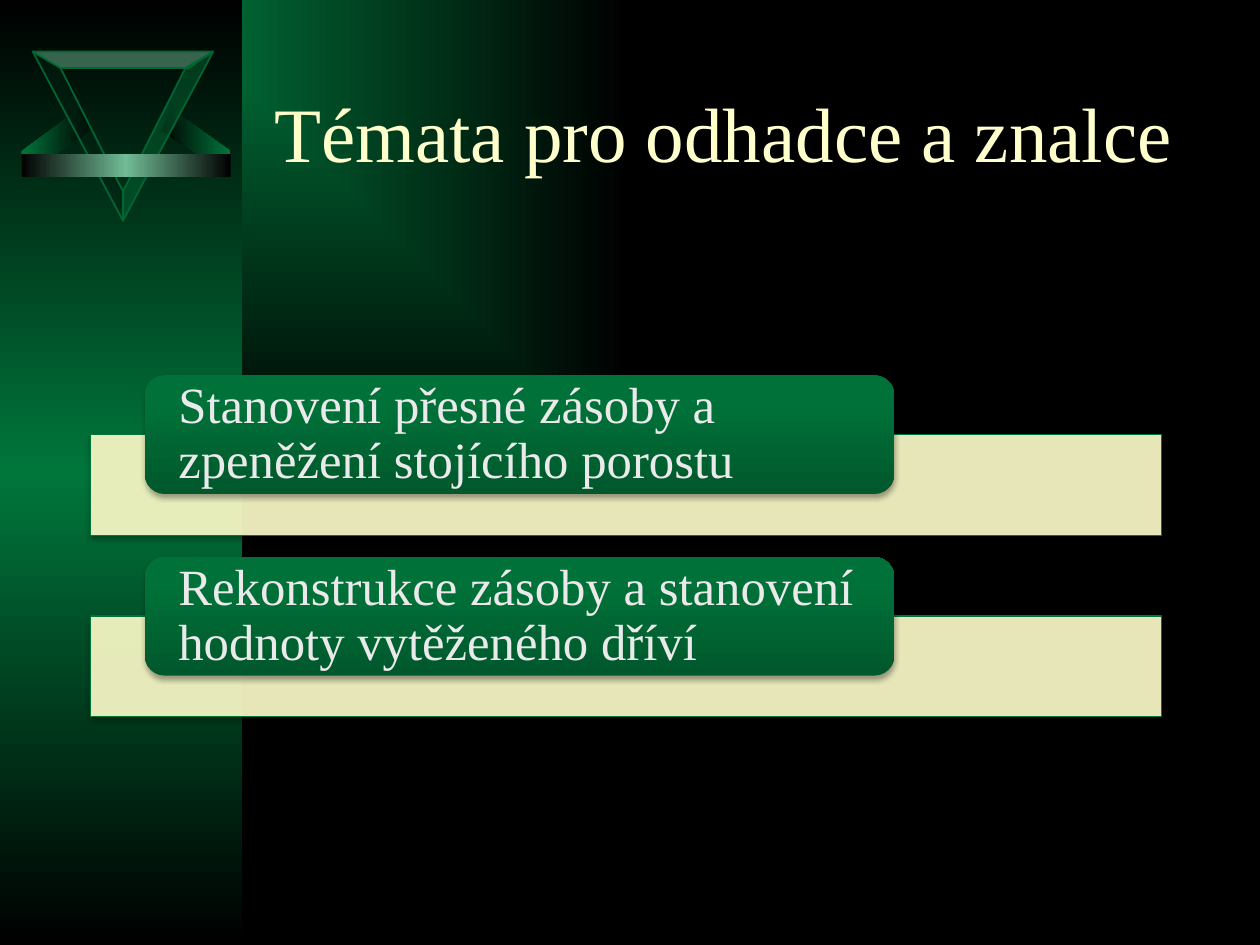
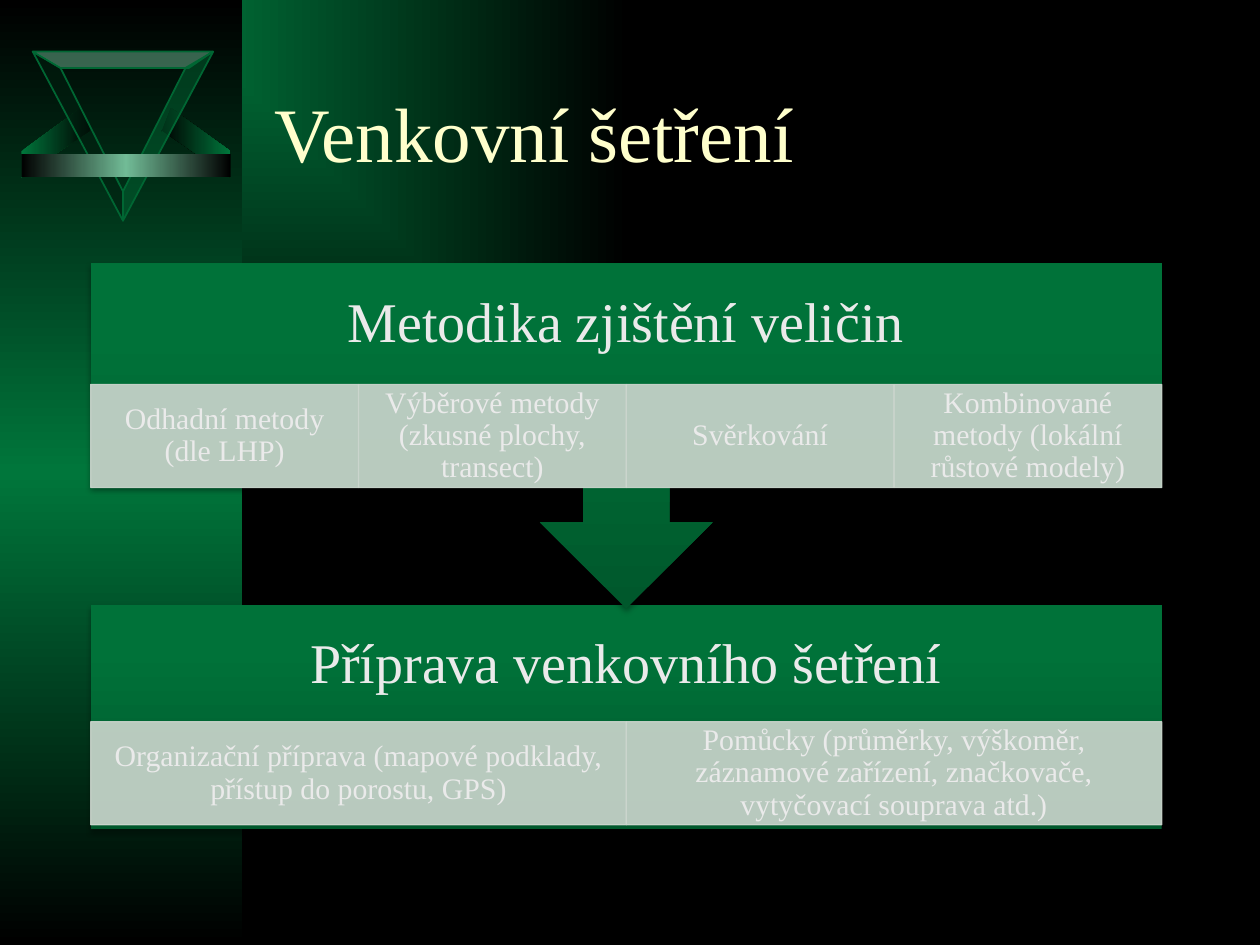
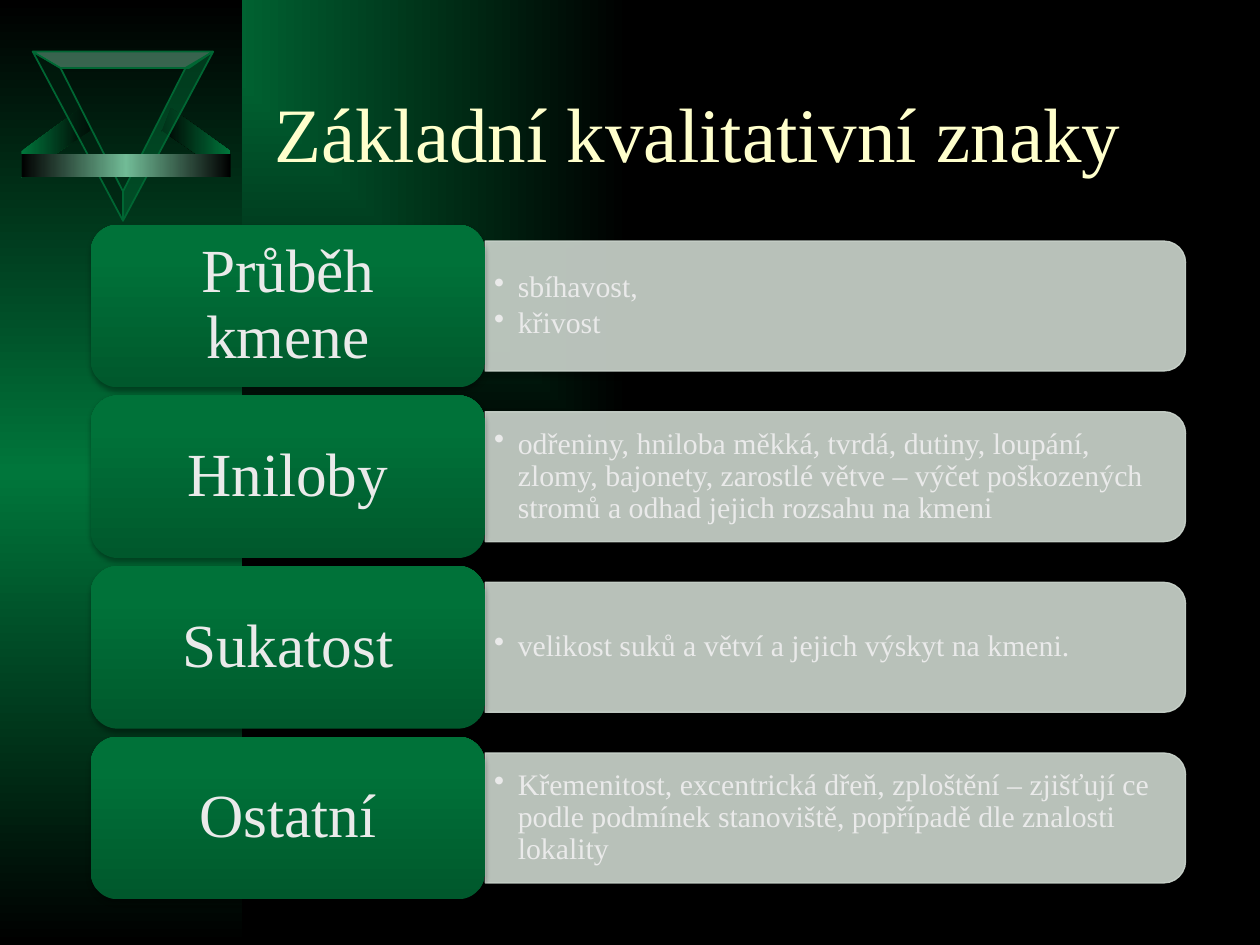
from dataclasses import dataclass
from typing import Any, NamedTuple

from pptx import Presentation
from pptx import oxml
from pptx import util as u
from pptx.dml.color import RGBColor
from pptx.enum import shapes, text
from pptx.oxml import ns

BLACK = RGBColor(0x00, 0x00, 0x00)
GREEN = RGBColor(0x00, 0x76, 0x3B)
PANEL_DARK = RGBColor(0x00, 0x58, 0x2C)
PANEL_MID = RGBColor(0x00, 0x72, 0x39)
PANEL_LIGHT = RGBColor(0x00, 0x73, 0x39)
EMBLEM_DARK = RGBColor(0x00, 0x20, 0x10)
EMBLEM_GREEN = RGBColor(0x00, 0x66, 0x33)
MINT = RGBColor(0x71, 0xBB, 0x96)
CREAM = RGBColor(0xFF, 0xFF, 0xCC)
SAGE = RGBColor(0xCC, 0xD6, 0xCE)
PALE = RGBColor(0xEA, 0xEA, 0xEA)
FONT = "Times New Roman"
PRESET = shapes.MSO_SHAPE
ALIGN = text.PP_ALIGN

LEFT = 1.83
WIDTH = 21.59


class Box(NamedTuple):
    left: float
    top: float
    width: float
    height: float

    def lengths(self) -> list[u.Length]:
        return [u.Cm(value) for value in self]


class Stop(NamedTuple):
    position: int
    color: RGBColor


@dataclass(frozen=True)
class Style:
    fill: RGBColor | None = None
    opacity: int = 100
    stops: tuple[Stop, ...] = ()
    angle: int = 0
    line: RGBColor | None = None
    line_width: float = 0.75
    line_opacity: int = 100
    shadow: bool = False


@dataclass(frozen=True)
class Block:
    top: float
    height: float
    preset: shapes.MSO_SHAPE
    rotation: int
    cells_top: float
    heading: str
    cells: tuple[str, ...]


@dataclass(frozen=True)
class Trait:
    name: str
    signs: tuple[str, ...]


PANEL = Style(
    stops=(Stop(0, PANEL_DARK), Stop(80, PANEL_MID), Stop(100, PANEL_LIGHT)),
    angle=270,
    shadow=True,
)
BAR = Style(fill=CREAM, opacity=90, line=GREEN, shadow=True)
CELL = Style(fill=SAGE, opacity=90, line=SAGE, line_opacity=90)
TRAIT_BODY = Style(fill=SAGE, opacity=90, line=SAGE, line_opacity=90, shadow=True)
SIDEBAR = Style(stops=(Stop(0, BLACK), Stop(50, GREEN), Stop(100, BLACK)), angle=90)
RIBBON = Style(stops=(Stop(0, BLACK), Stop(50, MINT), Stop(100, BLACK)))

RIGHT_WING = ((4.65, 3.05), (4.65, 3.58), (3.25, 2.62), (3.25, 2.67), (3.45, 2.18))
LEFT_SIDE = ((2.48, 4.45), (2.48, 3.86), (1.22, 1.37), (0.66, 1.04))
TOP_SIDE = ((0.66, 1.04), (1.22, 1.37), (3.81, 1.37), (4.29, 1.04))

TOPICS = (
    "Stanovení přesné zásoby a zpeněžení stojícího porostu",
    "Rekonstrukce zásoby a stanovení hodnoty vytěženého dříví",
)
BLOCKS = (
    Block(
        12.19, 4.52, PRESET.RECTANGLE, 0, 14.55,
        "Příprava venkovního šetření",
        (
            "Organizační příprava (mapové podklady, přístup do porostu, GPS)",
            "Pomůcky (průměrky, výškoměr, záznamové zařízení, značkovače, "
            "vytyčovací souprava atd.)",
        ),
    ),
    Block(
        5.31, 6.96, PRESET.UP_ARROW_CALLOUT, 180, 7.75,
        "Metodika zjištění veličin",
        (
            "Odhadní metody (dle LHP)",
            "Výběrové metody (zkusné plochy, transect)",
            "Svěrkování",
            "Kombinované metody (lokální růstové modely)",
        ),
    ),
)
TRAITS = (
    Trait("Průběh kmene", ("sbíhavost,", "křivost")),
    Trait("Hniloby", (
        "odřeniny, hniloba měkká, tvrdá, dutiny, loupání, zlomy, bajonety, zarostlé "
        "větve – výčet poškozených stromů a odhad jejich rozsahu na kmeni",
    )),
    Trait("Sukatost", ("velikost suků a větví a jejich výskyt na kmeni.",)),
    Trait("Ostatní", (
        "Křemenitost, excentrická dřeň, zploštění – zjišťují ce podle podmínek "
        "stanoviště, popřípadě dle znalosti lokality",
    )),
)


def linear(angle: int) -> str:
    return f'<a:lin ang="{angle * 60000}" scaled="0"/>'


def fill_gradient(owner: Any, fill: Any, stops: tuple[Stop, ...], direction: str) -> None:
    fill.gradient()
    gradient = owner.find(".//" + ns.qn("a:gradFill"))
    stop_list = "".join(
        f'<a:gs pos="{stop.position * 1000}"><a:srgbClr val="{stop.color}"/></a:gs>'
        for stop in stops
    )
    gradient.getparent().replace(gradient, oxml.parse_xml(
        f'<a:gradFill {ns.nsdecls("a")} rotWithShape="0">'
        f"<a:gsLst>{stop_list}</a:gsLst>{direction}</a:gradFill>"
    ))


def set_opacity(parent: Any, percent: int) -> None:
    color = parent.find(f'{ns.qn("a:solidFill")}/{ns.qn("a:srgbClr")}')
    color.append(oxml.parse_xml(f'<a:alpha {ns.nsdecls("a")} val="{percent * 1000}"/>'))


def apply_style(shape: Any, style: Style) -> None:
    properties = shape.element.spPr
    if style.stops:
        fill_gradient(shape.element, shape.fill, style.stops, linear(style.angle))
    else:
        shape.fill.solid()
        shape.fill.fore_color.rgb = style.fill
        if style.opacity < 100:
            set_opacity(properties, style.opacity)
    if style.line is None:
        shape.line.fill.background()
    else:
        shape.line.color.rgb = style.line
        shape.line.width = u.Pt(style.line_width)
        if style.line_opacity < 100:
            set_opacity(properties.find(ns.qn("a:ln")), style.line_opacity)
    shape.shadow.inherit = False
    if style.shadow:
        properties.find(ns.qn("a:effectLst")).append(oxml.parse_xml(
            f'<a:outerShdw {ns.nsdecls("a")} blurRad="40000" dist="23000" dir="5400000" '
            'rotWithShape="0"><a:srgbClr val="000000"><a:alpha val="35000"/></a:srgbClr>'
            "</a:outerShdw>"
        ))


def add_styled(
    parent: Any, preset: shapes.MSO_SHAPE, box: Box, style: Style, rotation: int = 0
) -> Any:
    shape = parent.shapes.add_shape(preset, *box.lengths())
    shape.rotation = rotation
    apply_style(shape, style)
    return shape


def add_outline(parent: Any, points: tuple[tuple[float, float], ...], style: Style) -> None:
    corners = [(u.Cm(x), u.Cm(y)) for x, y in points]
    builder = parent.shapes.build_freeform(*corners[0], scale=1.0)
    builder.add_line_segments(corners[1:], close=True)
    apply_style(builder.convert_to_shape(), style)


def mirrored(
    points: tuple[tuple[float, float], ...], axis: float
) -> tuple[tuple[float, float], ...]:
    return tuple((2 * axis - x, y) for x, y in points)


def add_bullet(paragraph: Any, indent: float) -> None:
    properties = paragraph._p.get_or_add_pPr()
    properties.set("marL", str(u.Cm(indent)))
    properties.set("indent", str(-u.Cm(indent)))
    properties.append(oxml.parse_xml(f'<a:buChar {ns.nsdecls("a")} char="•"/>'))


def write(
    shape: Any,
    *lines: str,
    size: float,
    color: RGBColor = PALE,
    align: ALIGN = ALIGN.CENTER,
    inset_x: float = 0,
    inset_y: float = 0,
    line_spacing: float = 0.9,
    space_after: float = 0,
    bulleted: bool = False,
) -> None:
    frame = shape.text_frame
    frame.word_wrap = True
    frame.auto_size = text.MSO_AUTO_SIZE.NONE
    frame.vertical_anchor = text.MSO_ANCHOR.MIDDLE
    frame.margin_left = frame.margin_right = u.Cm(inset_x)
    frame.margin_top = frame.margin_bottom = u.Cm(inset_y)
    for index, line in enumerate(lines):
        paragraph = frame.add_paragraph() if index else frame.paragraphs[0]
        if bulleted:
            paragraph.level = 1
            add_bullet(paragraph, 0.48)
        paragraph.alignment = align
        paragraph.line_spacing = line_spacing
        paragraph.space_after = u.Pt(space_after)
        run = paragraph.add_run()
        run.text = line
        run.font.name = FONT
        run.font.size = u.Pt(size)
        run.font.color.rgb = color


def prepare_layout(layout: Any) -> None:
    fill_gradient(
        layout.element, layout.background.fill, (Stop(0, GREEN), Stop(100, BLACK)),
        '<a:path path="rect"><a:fillToRect r="100000" b="100000"/></a:path>',
    )
    title = layout.placeholders[0]
    title.left, title.top, title.width, title.height = Box(5.28, 0.64, 19.69, 4.01).lengths()


def add_backdrop(slide: Any, layout: Any) -> None:
    backdrop = slide.shapes.add_group_shape()
    add_styled(backdrop, PRESET.RECTANGLE, Box(0, 0, 4.88, 19.05), SIDEBAR)
    add_outline(backdrop, RIGHT_WING, Style(stops=(Stop(0, BLACK), Stop(100, GREEN))))
    add_outline(
        backdrop, mirrored(RIGHT_WING, 2.54), Style(stops=(Stop(0, GREEN), Stop(100, BLACK)))
    )
    for points, color in (
        (LEFT_SIDE, EMBLEM_DARK),
        (TOP_SIDE, MINT),
        (mirrored(LEFT_SIDE, 2.48), EMBLEM_GREEN),
    ):
        add_outline(
            backdrop, points, Style(fill=color, opacity=50, line=EMBLEM_GREEN, line_width=1)
        )
    add_styled(backdrop, PRESET.RECTANGLE, Box(0.43, 3.1, 4.22, 0.48), RIBBON)
    layout.shapes.element.insert(2, backdrop.element)


def add_titled_slide(presentation: Any, layout: Any, title: str) -> Any:
    slide = presentation.slides.add_slide(layout)
    write(
        slide.shapes.title, title, size=44, color=CREAM, align=ALIGN.LEFT,
        inset_x=0.25, inset_y=0.13, line_spacing=1.0,
    )
    return slide


def draw_topics(slide: Any) -> None:
    for index, topic in enumerate(TOPICS):
        top = 7.57 + index * 3.66
        add_styled(slide, PRESET.RECTANGLE, Box(LEFT, top + 1.19, WIDTH, 2.03), BAR)
        tab = add_styled(slide, PRESET.ROUNDED_RECTANGLE, Box(2.92, top, 15.11, 2.39), PANEL)
        write(tab, topic, size=29, align=ALIGN.LEFT, inset_x=0.56)


def draw_blocks(slide: Any) -> None:
    for block in BLOCKS:
        add_styled(
            slide, block.preset, Box(LEFT, block.top, WIDTH, block.height), PANEL, block.rotation
        )
        heading = slide.shapes.add_textbox(*Box(LEFT, block.top, WIDTH, 2.44).lengths())
        write(heading, block.heading, size=32, inset_x=0.64, inset_y=0.64)
        cell_width = WIDTH / len(block.cells)
        for index, label in enumerate(block.cells):
            box = Box(LEFT + index * cell_width, block.cells_top, cell_width, 2.08)
            cell = add_styled(slide, PRESET.RECTANGLE, box, CELL)
            write(cell, label, size=17, inset_x=0.33, inset_y=0.05)


def draw_traits(slide: Any) -> None:
    tab_width, tab_height = 7.95, 3.28
    body_width, body_height = 14.12, 2.62
    body_left = LEFT + tab_width
    for index, trait in enumerate(TRAITS):
        top = 4.53 + index * 3.44
        middle = top + tab_height / 2
        upright = Box(
            body_left + (body_width - body_height) / 2, middle - body_width / 2,
            body_height, body_width,
        )
        add_styled(slide, PRESET.ROUND_2_SAME_RECTANGLE, upright, TRAIT_BODY, 90)
        signs = slide.shapes.add_textbox(*Box(body_left, middle - 1.18, 14, 2.36).lengths())
        write(
            signs, *trait.signs, size=17, align=ALIGN.LEFT, inset_x=0.18, inset_y=0.1,
            space_after=2.55, bulleted=True,
        )
        tab = add_styled(
            slide, PRESET.ROUNDED_RECTANGLE, Box(LEFT, top, tab_width, tab_height), PANEL
        )
        write(tab, trait.name, size=35, inset_x=0.38, inset_y=0.18)


def main() -> None:
    presentation = Presentation()
    presentation.slide_width = u.Cm(25.4)
    presentation.slide_height = u.Cm(19.05)
    layout = presentation.slide_layouts[5]
    prepare_layout(layout)
    topics = add_titled_slide(presentation, layout, "Témata pro odhadce a znalce")
    add_backdrop(topics, layout)
    draw_topics(topics)
    draw_blocks(add_titled_slide(presentation, layout, "Venkovní šetření"))
    draw_traits(add_titled_slide(presentation, layout, "Základní kvalitativní znaky"))
    presentation.save("out.pptx")


if __name__ == "__main__":
    main()
